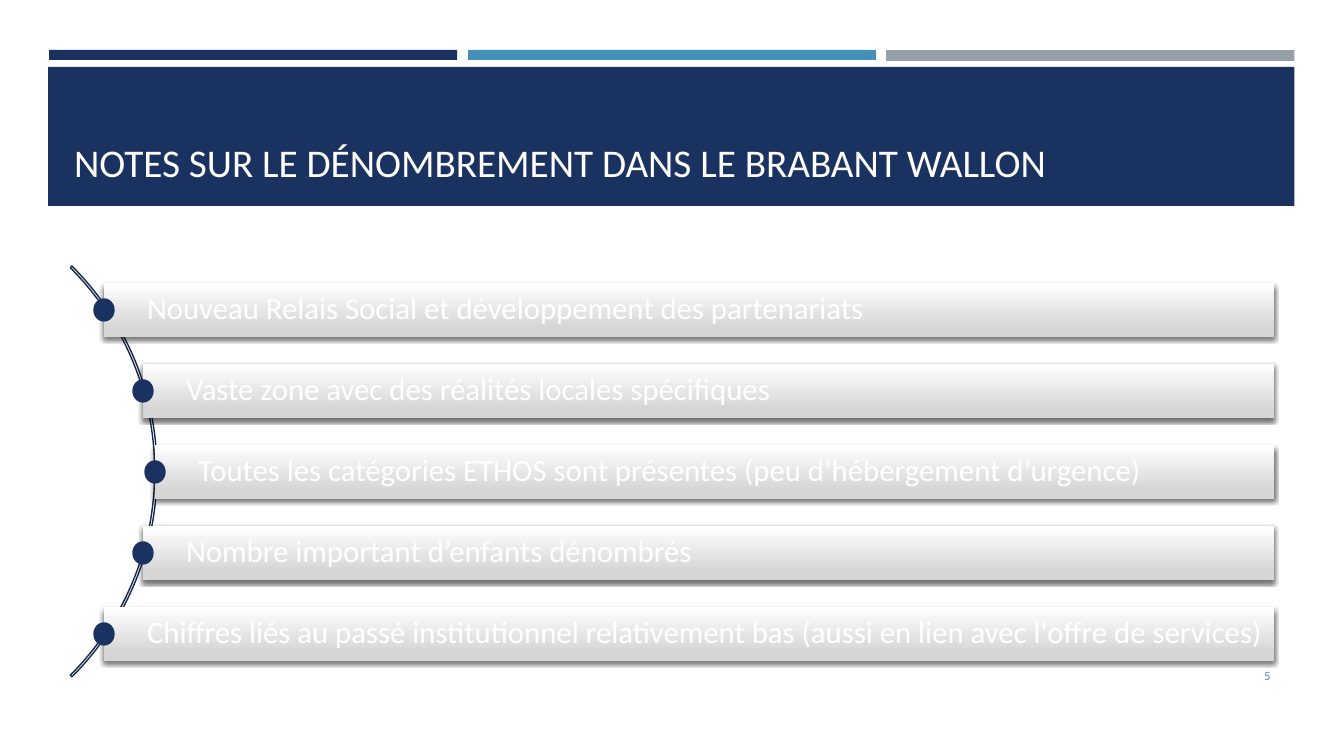
from lxml import etree
from pptx import Presentation
from pptx import util as u
from pptx.dml.color import RGBColor
from pptx.enum import shapes, text
from pptx.oxml import ns

COLORS = {"navy": "1A3260", "blue": "4590B8", "grey": "969FA7", "arc": "15284D",
          "white": "FFFFFF", "silver": "D6D6D6", "black": "000000"}


class Deck:
    """Builds styled elements on one slide, with lengths in px."""
    PX = 914400 / 100.8
    FONT = "Calibri"

    def __init__(self, width, height):
        self.prs = Presentation()
        self.prs.slide_width, self.prs.slide_height = u.Inches(width), u.Inches(height)
        self.slide = self.prs.slides.add_slide(self.prs.slide_layouts[5])

    def box(self, *lengths):
        return [u.Emu(round(n * self.PX)) for n in lengths]

    def color(self, name):
        return RGBColor.from_string(COLORS[name])

    def shape(self, kind, box, fill=None, line=None):
        sp = self.slide.shapes.add_shape(kind, *self.box(*box))
        sp.shadow.inherit = False
        if fill:
            sp.fill.solid()
            sp.fill.fore_color.rgb = self.color(fill)
        else:
            sp.fill.background()
        if line:
            sp.line.color.rgb = self.color(line)
            sp.line.width = u.Pt(1)
        else:
            sp.line.fill.background()
        return sp

    def rect(self, box, fill=None):
        return self.shape(shapes.MSO_SHAPE.RECTANGLE, box, fill)

    def set_text(self, sp, words, size, color, anchor, align=text.PP_ALIGN.LEFT):
        tf = sp.text_frame
        tf.word_wrap = True
        tf.auto_size = text.MSO_AUTO_SIZE.NONE
        tf.vertical_anchor = anchor
        tf.text = words
        p = tf.paragraphs[0]
        p.alignment = align
        p.font.name, p.font.size = self.FONT, u.Pt(size)
        p.font.color.rgb = self.color(color)
        return tf

    def title(self, words, box):
        sp = self.slide.shapes.title
        sp.left, sp.top, sp.width, sp.height = self.box(*box)
        self.set_text(sp, words, 28, "white", text.MSO_ANCHOR.BOTTOM)
        sp.element.getparent().append(sp.element)

    def label(self, words, box, size, color, align):
        sp = self.slide.shapes.add_textbox(*self.box(*box))
        self.set_text(sp, words, size, color, text.MSO_ANCHOR.MIDDLE, align)

    def arc(self, box):
        sp = self.shape(shapes.MSO_SHAPE.BLOCK_ARC, box, line="arc")
        for i, value in enumerate((189, 27, 0.004)):
            sp.adjustments[i] = value

    def shadow(self, sp):
        effects = sp.element.spPr.find(ns.qn("a:effectLst"))
        outer = etree.SubElement(effects, ns.qn("a:outerShdw"), blurRad=str(u.Pt(3)),
                                 dist=str(u.Pt(2)), dir="5400000", rotWithShape="0")
        tint = etree.SubElement(outer, ns.qn("a:srgbClr"), val=COLORS["black"])
        etree.SubElement(tint, ns.qn("a:alpha"), val="55000")

    def bar(self, words, box):
        sp = self.rect(box)
        sp.fill.gradient()
        sp.fill.gradient_angle = 270
        for stop, (name, position) in zip(sp.fill.gradient_stops,
                                          (("white", 0), ("silver", 0.84))):
            stop.color.rgb, stop.position = self.color(name), position
        self.shadow(sp)
        tf = self.set_text(sp, words, 22, "white", text.MSO_ANCHOR.MIDDLE)
        tf.margin_left, tf.margin_top, tf.margin_right, tf.margin_bottom = self.box(43, 6, 6, 6)
        tf.paragraphs[0].line_spacing = 0.9

    def dot(self, x, y):
        self.shape(shapes.MSO_SHAPE.OVAL, (x - 10, y - 11, 20, 22), "navy", "navy")


NOTES = [
    (104, "Nouveau Relais Social et développement des partenariats"),
    (143, "Vaste zone avec des réalités locales spécifiques"),
    (155, "Toutes les catégories ETHOS sont présentes (peu d’hébergement d’urgence)"),
    (143, "Nombre important d’enfants dénombrés"),
    (104, "Chiffres liés au passé institutionnel relativement bas "
          "(aussi en lien avec l'offre de services)"),
]
BAR_TOP, BAR_PITCH, BAR_HEIGHT, BAR_RIGHT = 283, 81, 54, 1274


def main():
    deck = Deck(13.33, 7.5)
    for x, height, fill in ((49, 10, "navy"), (468, 10, "blue"), (886, 11, "grey")):
        deck.rect((x, 50, 408, height), fill)
    deck.rect((48, 67, 1246, 139), "navy")
    deck.title("NOTES SUR LE DÉNOMBREMENT DANS LE BRABANT WALLON", (64, 81, 1216, 109))
    deck.label("5", (1164, 656, 116, 40), 9, "blue", text.PP_ALIGN.RIGHT)
    deck.arc((-424, 181, 581, 581))
    for i, (left, words) in enumerate(NOTES):
        top = BAR_TOP + i * BAR_PITCH
        deck.bar(words, (left, top, BAR_RIGHT - left, BAR_HEIGHT))
        deck.dot(left, top + BAR_HEIGHT // 2)
    deck.prs.save("out.pptx")


if __name__ == "__main__":
    main()
